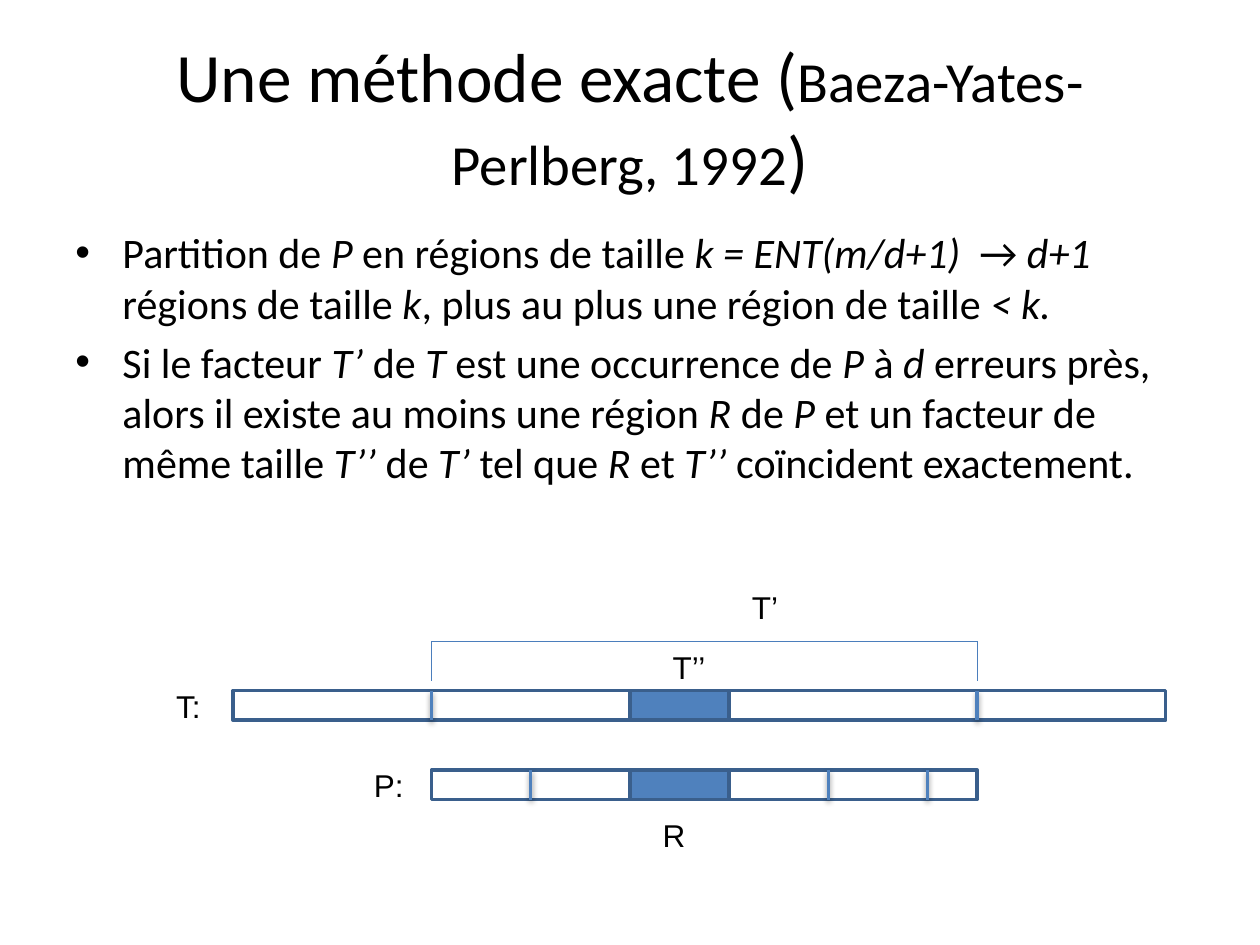
"""Build a slide on exact approximate matching by partitioning the pattern."""
import pptx
import pptx.dml.color
import pptx.enum.shapes
import pptx.enum.text
import pptx.oxml
import pptx.oxml.ns
import pptx.util
from pptx.util import Cm

BLUE, EDGE, BRACKET, BLACK = "4F81BD", "3A5F8C", "4B7EBC", "000000"

TITLE = [("Une méthode exacte (", 39.6), ("Baeza-Yates-Perlberg, 1992", 32.4), (")", 39.6)]

# Runs alternate between upright and italic.
BULLETS = [
    ["Partition de ", "P", " en régions de taille ", "k = ENT(m/d+1)  ", "→ ", "d+1",
     " régions de taille ", "k", ", plus au plus une région de taille ", "< k."],
    ["Si le facteur ", "T’ ", "de ", "T", " est une occurrence de ", "P", " à ", "d",
     " erreurs près, alors il existe au moins une région ", "R", " de ", "P",
     " et un facteur de même taille ", "T’’ ", "de ", "T’", " tel que ", "R", " et ",
     "T’’ ", "coïncident exactement."],
]

REGION, BAR_HEIGHT = 2, 0.6
TEXT_LEFT, TEXT_WIDTH, TEXT_TOP = 4.7, 18.8, 13.92
PATTERN_LEFT, PATTERN_WIDTH, PATTERN_TOP = 8.7, 11, 15.52
PATTERN_RIGHT = PATTERN_LEFT + PATTERN_WIDTH
MATCH_LEFT = PATTERN_LEFT + 2 * REGION
BRACKET_TOP, BRACKET_BOTTOM = 12.93, 13.72

BARS = [
    (TEXT_LEFT, TEXT_TOP, TEXT_WIDTH, None),
    (PATTERN_LEFT, PATTERN_TOP, PATTERN_WIDTH, None),
    (MATCH_LEFT, TEXT_TOP, REGION, BLUE),
    (MATCH_LEFT, PATTERN_TOP, REGION, BLUE),
]
CUTS = [(PATTERN_LEFT + step * REGION, PATTERN_TOP) for step in (1, 4, 5)]
CUTS += [(PATTERN_LEFT, TEXT_TOP), (PATTERN_RIGHT, TEXT_TOP)]
BRACKET_LINES = [
    (PATTERN_LEFT, BRACKET_BOTTOM, PATTERN_LEFT, BRACKET_TOP),
    (PATTERN_LEFT, BRACKET_TOP, PATTERN_RIGHT, BRACKET_TOP),
    (PATTERN_RIGHT, BRACKET_BOTTOM, PATTERN_RIGHT, BRACKET_TOP),
]
LABELS = [
    ("P:", 7.29, 15.32, 1.12), ("T:", 3.3, 13.72, 1.02), ("T’’", 13.31, 12.93, 1.17),
    ("R", 13.11, 16.33, 0.97), ("T’", 14.91, 11.73, 1.04),
]
SHADOW = (
    '<a:outerShdw blurRad="40000" dist="20000" dir="5400000" rotWithShape="0">'
    '<a:srgbClr val="000000"><a:alpha val="38000"/></a:srgbClr></a:outerShdw>'
)


def color(code):
    return pptx.dml.color.RGBColor.from_string(code)


def add_span(para, text, size, font, italic=False):
    span = para.add_run()
    span.text = text
    span.font.size = pptx.util.Pt(size)
    span.font.name = font
    span.font.italic = italic
    span.font.color.rgb = color(BLACK)


def add_box(slide, left, top, width, height, wrap=True):
    box = slide.shapes.add_textbox(Cm(left), Cm(top), Cm(width), Cm(height))
    box.text_frame.word_wrap = wrap
    return box.text_frame


def add_bullet(para):
    properties = para._p.get_or_add_pPr()
    properties.set("marL", str(Cm(0.95)))
    properties.set("indent", str(Cm(-0.95)))
    namespace = pptx.oxml.ns.nsdecls("a")
    for tag in ('buFont typeface="Arial"', 'buChar char="•"'):
        properties.append(pptx.oxml.parse_xml(f"<a:{tag} {namespace}/>"))


def add_line(slide, start_x, start_y, end_x, end_y, code, width, effect=""):
    line = slide.shapes.add_connector(
        pptx.enum.shapes.MSO_CONNECTOR.STRAIGHT, Cm(start_x), Cm(start_y), Cm(end_x), Cm(end_y))
    line.line.color.rgb = color(code)
    line.line.width = pptx.util.Pt(width)
    namespace = pptx.oxml.ns.nsdecls("a")
    line._element.spPr.append(
        pptx.oxml.parse_xml(f"<a:effectLst {namespace}>{effect}</a:effectLst>"))


def add_bar(slide, left, top, width, fill):
    bar = slide.shapes.add_shape(
        pptx.enum.shapes.MSO_SHAPE.RECTANGLE, Cm(left), Cm(top), Cm(width), Cm(BAR_HEIGHT))
    bar.shadow.inherit = False
    bar.line.color.rgb = color(EDGE)
    bar.line.width = pptx.util.Pt(2)
    if fill:
        bar.fill.solid()
        bar.fill.fore_color.rgb = color(fill)
    else:
        bar.fill.background()


def main():
    deck = pptx.Presentation()
    deck.slide_width, deck.slide_height = Cm(25.4), Cm(19.05)
    slide = deck.slides.add_slide(deck.slide_layouts[6])

    title = add_box(slide, 1.27, 0.76, 22.86, 3.18)
    title.vertical_anchor = pptx.enum.text.MSO_ANCHOR.MIDDLE
    title.paragraphs[0].alignment = pptx.enum.text.PP_ALIGN.CENTER
    for text, size in TITLE:
        add_span(title.paragraphs[0], text, size, "Calibri")

    body = add_box(slide, 1.27, 4.45, 22.86, 7.87)
    for index, texts in enumerate(BULLETS):
        para = body.add_paragraph() if index else body.paragraphs[0]
        para.space_before = pptx.util.Pt(4.8)
        add_bullet(para)
        for place, text in enumerate(texts):
            add_span(para, text, 24, "Calibri", place % 2 == 1)

    for bar in BARS:
        add_bar(slide, *bar)
    for x, y in CUTS:
        add_line(slide, x, y, x, y + BAR_HEIGHT, BLUE, 2, SHADOW)
    for ends in BRACKET_LINES:
        add_line(slide, *ends, BRACKET, 0.75)
    for text, left, top, width in LABELS:
        label = add_box(slide, left, top, width, 1.02, wrap=False)
        add_span(label.paragraphs[0], text, 18, "Arial")

    deck.save("out.pptx")


if __name__ == "__main__":
    main()
